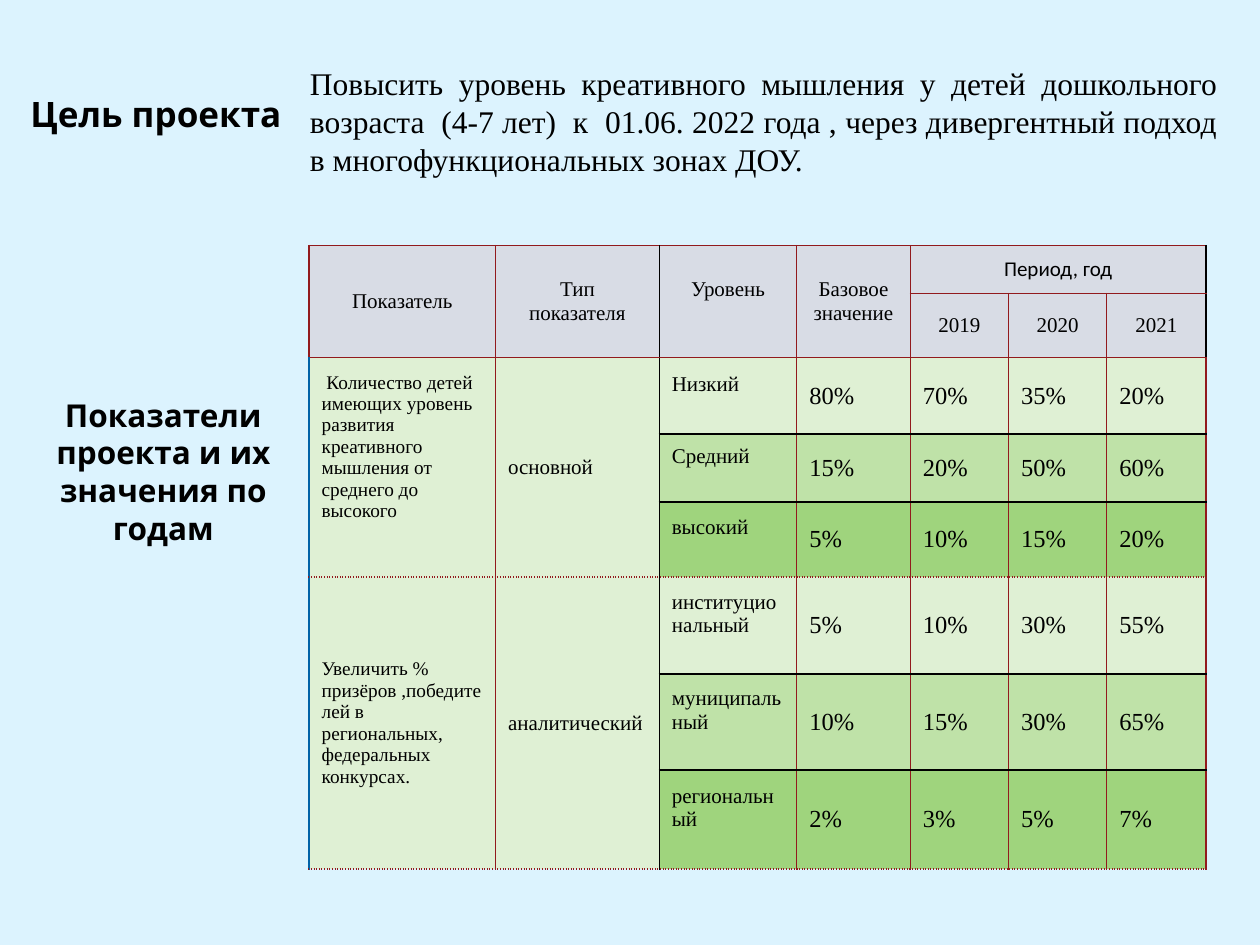
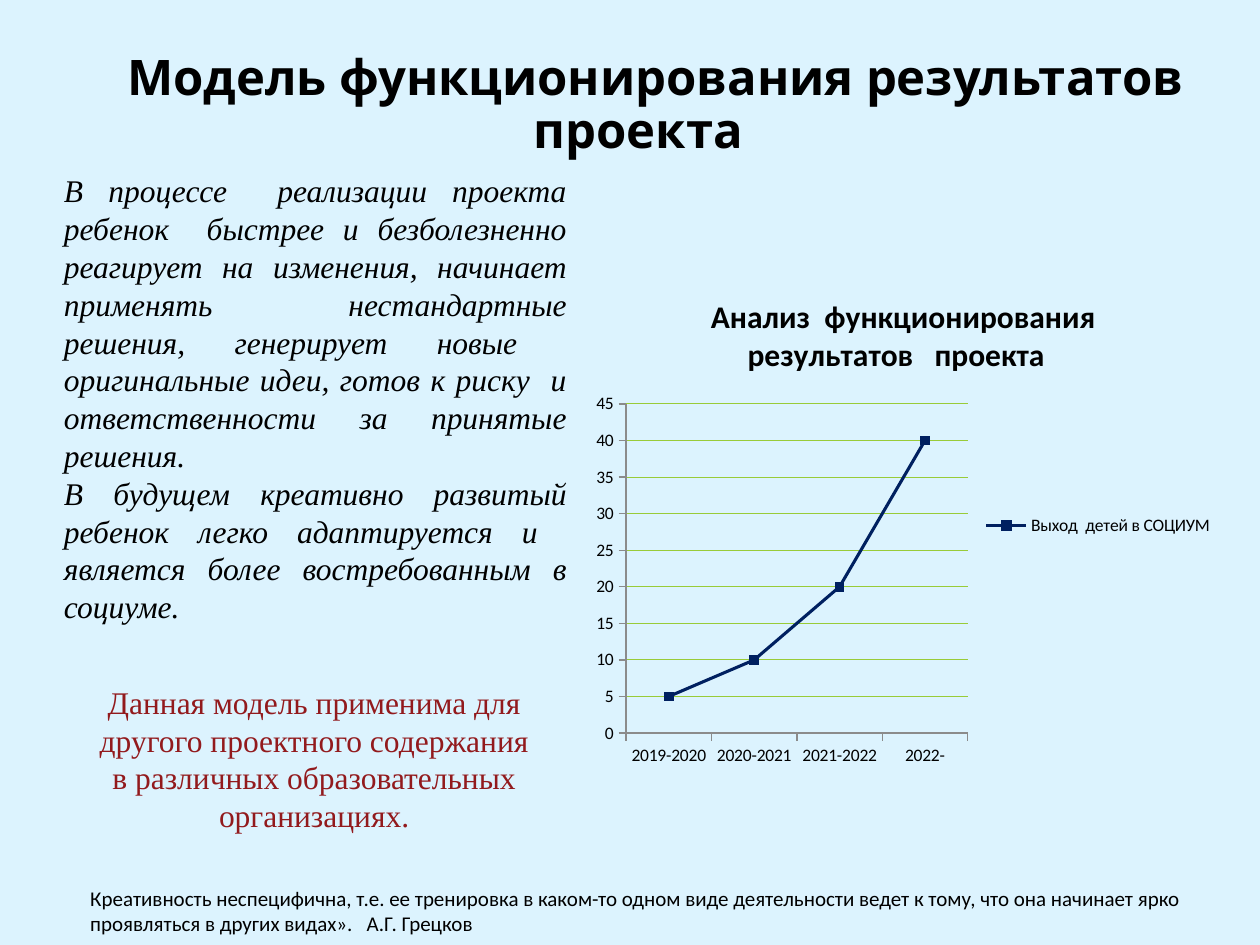
from dataclasses import dataclass

from lxml import etree
from pptx import Presentation
from pptx import util as u
from pptx.chart import data as cd
from pptx.dml import color as dc
from pptx.enum import chart as ch
from pptx.enum import text as tx
from pptx.oxml import ns

HUES = {
    "back": "DCF3FE", "ink": "000000", "red": "921A1D", "blue": "0062A7",
    "head": "D8DCE5", "pale": "DFF0D4", "mid": "BFE2A8", "deep": "9FD47D",
    "grid": "99CB38", "navy": "002060", "axis": "8B8B8B",
}
SERIF, SANS, HEAD = "Times New Roman", "Calibri", "Karla"
LEFT, MID, JUST = tx.PP_ALIGN.LEFT, tx.PP_ALIGN.CENTER, tx.PP_ALIGN.JUSTIFY


@dataclass
class Style:
    font: str = SERIF
    size: float = 12
    bold: bool = False
    slant: bool = False
    hue: str = "ink"
    align: int = LEFT


@dataclass
class Note:
    """A text block; box is left, top, width, height in cm."""
    box: tuple
    lines: list
    style: Style


@dataclass
class Group:
    """One indicator with its three levels."""
    goal: str
    kind: str
    rows: list
    foot: float = 0.13


def rgb(name: str) -> dc.RGBColor:
    return dc.RGBColor.from_string(HUES[name])


def set_font(font, style: Style) -> None:
    font.name, font.size = style.font, u.Pt(style.size)
    font.bold, font.italic = style.bold, style.slant
    font.color.rgb = rgb(style.hue)


def write(frame, lines: list, style: Style) -> None:
    for i, line in enumerate(lines):
        para = frame.add_paragraph() if i else frame.paragraphs[0]
        para.alignment = style.align
        run = para.add_run()
        run.text = line
        set_font(run.font, style)


def place(shape, note: Note) -> None:
    shape.left, shape.top, shape.width, shape.height = map(u.Cm, note.box)
    frame = shape.text_frame
    frame.word_wrap = True
    frame.auto_size = tx.MSO_AUTO_SIZE.NONE
    write(frame, note.lines, note.style)


def add_note(slide, note: Note) -> None:
    place(slide.shapes.add_textbox(0, 0, 0, 0), note)


def add_slide(deck, title: Note, anchor):
    slide = deck.slides.add_slide(deck.slide_layouts[5])
    fill = slide.background.fill
    fill.solid()
    fill.fore_color.rgb = rgb("back")
    place(slide.shapes.title, title)
    slide.shapes.title.text_frame.vertical_anchor = anchor
    return slide


# Table of indicators
WIDE = [3.76, 3.3, 2.77, 2.29, 1.98, 1.98, 2]
HIGH = [0.97, 1.29, 1.54, 1.37, 1.51, 1.96, 1.93, 2]
TOPS = [["Показатель"], ["Тип", "показателя"], ["Уровень"], ["Базовое", "значение"]]
YEARS = ["2019", "2020", "2021"]
GROUPS = [
    Group(" Количество детей имеющих уровень развития креативного мышления "
          "от среднего до высокого", "основной",
          [("Низкий", 80, 70, 35, 20), ("Средний", 15, 20, 50, 60),
           ("высокий", 5, 10, 15, 20)], 0.95),
    Group("Увеличить % призёров ,победителей в региональных, федеральных конкурсах.",
          "аналитический",
          [("институциональный", 5, 10, 30, 55), ("муниципальный", 10, 15, 30, 65),
           ("региональный", 2, 3, 5, 7)]),
]
LIFT = 0.6  # bottom margin that raises the level names


def row_line(row: int) -> tuple:
    """Hue and dash of the horizontal line above a row."""
    if row <= 2:
        return "red", "solid"
    return ("red", "sysDot") if row in (5, 8) else ("ink", "solid")


def col_line(col: int, row: int) -> tuple:
    """Hue and dash of the vertical line left of a column."""
    if col == 0 and row >= 2:
        return "blue", "solid"
    return ("ink" if col == 2 or (col == 7 and row < 2) else "red"), "solid"


def add_lines(cell, row: int, col: int) -> None:
    end_row, end_col = row + cell.span_height, col + cell.span_width
    sides = {"lnL": col_line(col, row), "lnR": col_line(end_col, row),
             "lnT": row_line(row), "lnB": row_line(end_row)}
    props = cell._tc.get_or_add_tcPr()
    for i, (tag, (hue, dash)) in enumerate(sides.items()):
        line = etree.Element(ns.qn("a:" + tag), w="12700")
        fill = etree.SubElement(line, ns.qn("a:solidFill"))
        etree.SubElement(fill, ns.qn("a:srgbClr"), val=HUES[hue])
        etree.SubElement(line, ns.qn("a:prstDash"), val=dash)
        props.insert(i, line)


def add_grid(slide) -> None:
    frame = slide.shapes.add_table(len(HIGH), len(WIDE), u.Cm(6.23), u.Cm(4.95),
                                   u.Cm(sum(WIDE)), u.Cm(sum(HIGH)))
    grid = frame.table
    for col, wide in zip(grid.columns, WIDE):
        col.width = u.Cm(wide)
    for row, high in zip(grid.rows, HIGH):
        row.height = u.Cm(high)

    def put(row, col, lines, hue, style, tall=1, span=1, foot=0.13):
        cell = grid.cell(row, col)
        if tall * span > 1:
            cell.merge(grid.cell(row + tall - 1, col + span - 1))
        cell.vertical_anchor = tx.MSO_ANCHOR.MIDDLE
        cell.margin_bottom = u.Cm(foot)
        cell.fill.solid()
        cell.fill.fore_color.rgb = rgb(hue)
        write(cell.text_frame, lines, style)
        add_lines(cell, row, col)

    # Header rows
    top = Style(align=MID)
    for col, lines in enumerate(TOPS):
        put(0, col, lines, "head", top, tall=2, foot=LIFT if col == 2 else 0.13)
    put(0, 4, ["Период, год"], "head", Style(SANS, align=MID), span=3)
    for col, year in enumerate(YEARS, 4):
        put(1, col, [year], "head", top)

    # Body rows
    for g, group in enumerate(GROUPS):
        first = 2 + 3 * g
        put(first, 0, [group.goal], "pale", Style(size=11), tall=3, foot=group.foot)
        put(first, 1, [group.kind], "pale", Style(), tall=3)
        for row, (hue, vals) in enumerate(zip(("pale", "mid", "deep"), group.rows), first):
            put(row, 2, [vals[0]], hue, Style(), foot=LIFT)
            for col, val in enumerate(vals[1:], 3):
                put(row, col, [f"{val}%"], hue, Style(size=14))


# Chart of results
def set_plot(chart, **parts: float) -> None:
    """Fix the inner plot area, as shares of the chart."""
    area = chart._chartSpace.chart.plotArea
    for old in area.findall(ns.qn("c:layout")):
        area.remove(old)
    layout = etree.Element(ns.qn("c:layout"))
    area.insert(0, layout)
    manual = etree.SubElement(layout, ns.qn("c:manualLayout"))
    rules = {"layoutTarget": "inner", "xMode": "edge", "yMode": "edge", **parts}
    for tag, val in rules.items():
        etree.SubElement(manual, ns.qn("c:" + tag), val=str(val))


def add_graph(slide) -> None:
    data = cd.CategoryChartData()
    data.categories = ["2019-2020", "2020-2021", "2021-2022", "2022-"]
    data.add_series("Выход  детей в СОЦИУМ", (5, 10, 20, 40))
    chart = slide.shapes.add_chart(ch.XL_CHART_TYPE.LINE_MARKERS, u.Cm(11.71), u.Cm(5.49),
                                   u.Cm(13), u.Cm(10.21), data).chart
    set_font(chart.font, Style(SANS, 10))
    chart.has_title = True
    write(chart.chart_title.text_frame, ["Анализ  функционирования результатов   проекта  "],
          Style(SANS, 18, bold=True, align=MID))
    chart.has_legend = True
    chart.legend.position = ch.XL_LEGEND_POSITION.RIGHT
    chart.legend.include_in_layout = False
    set_plot(chart, x=0.07, y=0.26, w=0.53, h=0.65)

    for axis in (chart.category_axis, chart.value_axis):
        axis.major_tick_mark = ch.XL_TICK_MARK.OUTSIDE
        axis.format.line.color.rgb = rgb("axis")
    axis = chart.value_axis
    axis.minimum_scale, axis.maximum_scale, axis.major_unit = 0, 45, 5
    axis.has_major_gridlines = True
    line = axis.major_gridlines.format.line
    line.color.rgb, line.width = rgb("grid"), u.Pt(0.5)

    chart.plots[0].vary_by_categories = False
    series = chart.plots[0].series[0]
    series.smooth = False
    series.format.line.color.rgb = rgb("navy")
    series.format.line.width = u.Pt(1.75)
    mark = series.marker
    mark.style, mark.size = ch.XL_MARKER_STYLE.SQUARE, 5
    mark.format.fill.solid()
    mark.format.fill.fore_color.rgb = rgb("navy")
    mark.format.line.color.rgb = rgb("navy")


# Slides
def goal_slide(deck) -> None:
    title = Note((0.36, 1.73, 5.87, 1.12), ["Цель проекта"], Style(HEAD, 20, bold=True))
    slide = add_slide(deck, title, tx.MSO_ANCHOR.TOP)
    add_note(slide, Note((6, 1.17, 18.8, 2.57), [
        "Повысить уровень креативного мышления у детей дошкольного возраста  (4-7 лет)  "
        "к  01.06. 2022 года , через дивергентный подход в многофункциональных зонах ДОУ.",
    ], Style(size=18, align=JUST)))
    add_note(slide, Note((0.36, 7.85, 5.87, 3.33), [
        "Показатели проекта и их значения по годам",
    ], Style(HEAD, 18, bold=True, align=MID)))
    add_grid(slide)


def model_slide(deck) -> None:
    title = Note((1.04, 0.46, 23.65, 2.87), ["Модель функционирования результатов проекта"],
                 Style(HEAD, 28, bold=True, align=MID))
    slide = add_slide(deck, title, tx.MSO_ANCHOR.BOTTOM)
    para = slide.shapes.title.text_frame.paragraphs[0]
    para.line_spacing = 0.9
    para._p.get_or_add_pPr().set("indent", str(u.Cm(0.69)))
    add_note(slide, Note((1.04, 3.33, 10.64, 9.5), [
        "В процессе  реализации проекта ребенок  быстрее и безболезненно реагирует на "
        "изменения, начинает применять нестандартные решения, генерирует новые  "
        "оригинальные идеи, готов к риску  и ответственности за принятые решения.",
        "В будущем креативно развитый ребенок легко адаптируется и  является более "
        "востребованным в социуме. ",
    ], Style(size=18, slant=True, align=JUST)))
    add_note(slide, Note((1.57, 13.64, 9.53, 4.11), [
        "Данная модель применима для другого проектного содержания в различных "
        "образовательных организациях.",
    ], Style(size=18, hue="red", align=MID)))
    add_graph(slide)
    add_note(slide, Note((1.57, 17.73, 22.99, 1.27), [
        "Креативность неспецифична, т.е. ее тренировка в каком-то одном виде деятельности "
        "ведет к тому, что она начинает ярко проявляться в других видах».   А.Г. Грецков",
    ], Style(SANS)))


def main() -> None:
    deck = Presentation()
    deck.slide_width, deck.slide_height = u.Cm(25.4), u.Cm(19.05)
    goal_slide(deck)
    model_slide(deck)
    deck.save("out.pptx")


if __name__ == "__main__":
    main()
